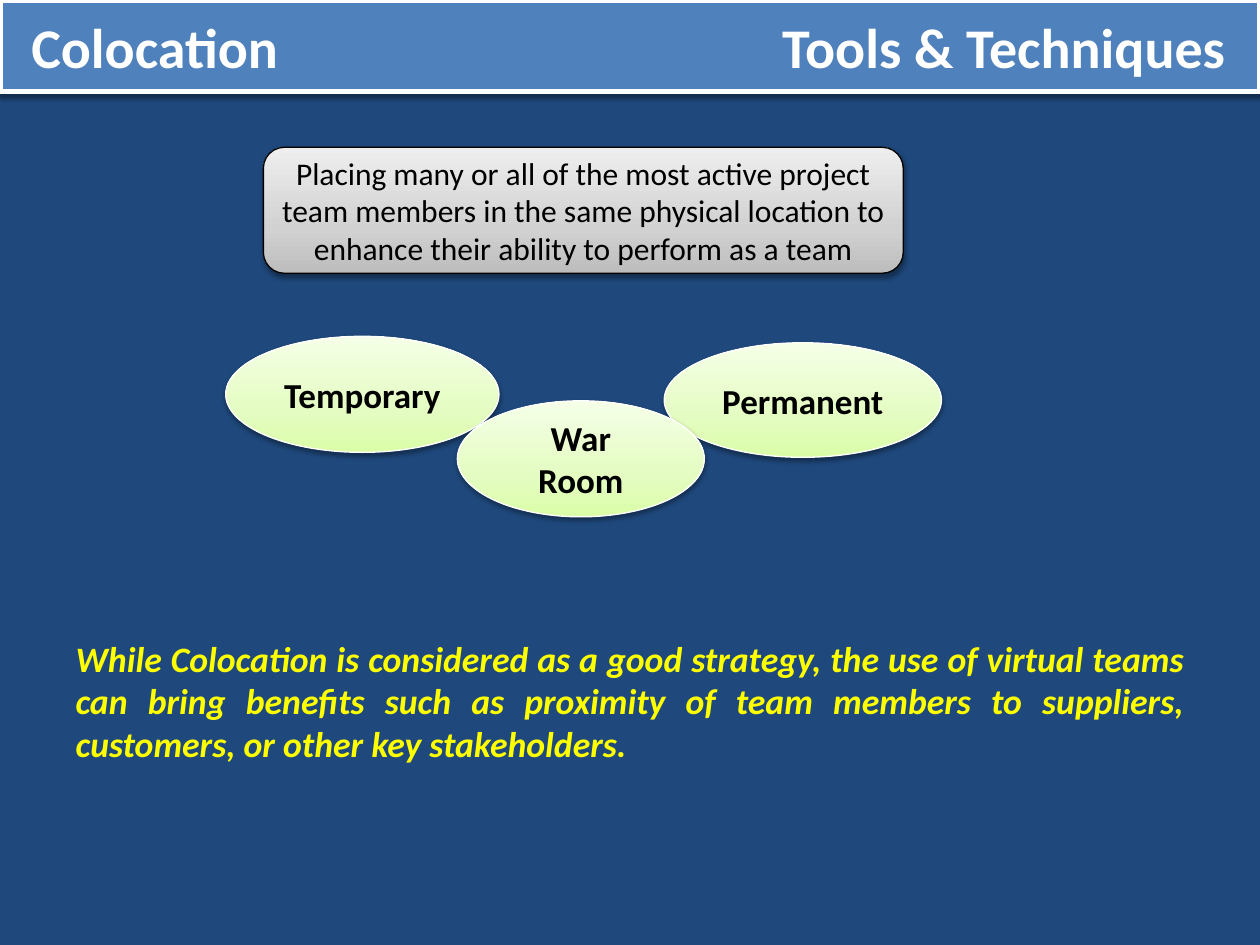
"""Build the Colocation slide."""
from lxml.etree import SubElement
from pptx import Presentation
from pptx.dml.color import RGBColor
from pptx.enum.shapes import MSO_SHAPE
from pptx.enum.text import MSO_ANCHOR, MSO_AUTO_SIZE, PP_ALIGN
from pptx.oxml.ns import qn
from pptx.util import Cm, Pt

COLORS = {
    "background": "1F497D",
    "banner": "4F81BD",
    "white": "FFFFFF",
    "black": "000000",
    "yellow": "FFFF00",
}
GRAY_STOPS = ((0, "BDBDBD"), (35, "D1D1D1"), (100, "EEEEEE"))
GREEN_STOPS = ((0, "DAFDA7"), (35, "E4FCC2"), (100, "F5FFE7"))
STRATEGIES = (
    ("Temporary", (4.55, 6.78, 5.51, 2.34)),
    ("Permanent", (13.39, 6.91, 5.59, 2.31)),
    ("War Room", (9.22, 8.08, 4.98, 2.34)),
)


def rgb(name):
    return RGBColor.from_string(COLORS[name])


def place(shape, bounds):
    for side, length in zip(("left", "top", "width", "height"), bounds):
        setattr(shape, side, Cm(length))


def set_text(shape, text, size, color, align=PP_ALIGN.CENTER,
             anchor=MSO_ANCHOR.MIDDLE, **styles):
    frame = shape.text_frame
    frame.word_wrap = True
    frame.auto_size = MSO_AUTO_SIZE.NONE
    frame.vertical_anchor = anchor
    para = frame.paragraphs[0]
    para.alignment = align
    span = para.add_run()
    span.text = text
    formats = {"name": "Calibri", "size": Pt(size), **styles}
    for name, value in formats.items():
        setattr(span.font, name, value)
    span.font.color.rgb = rgb(color)
    return para


def set_outline(shape, color, width):
    shape.line.color.rgb = rgb(color)
    shape.line.width = Pt(width)


def add_shadow(shape):
    shape.shadow.inherit = False
    effects = shape.element.spPr.find(qn("a:effectLst"))
    shadow = SubElement(effects, qn("a:outerShdw"), blurRad="40000",
                        dist="20000", dir="5400000", rotWithShape="0")
    color = SubElement(shadow, qn("a:srgbClr"), val=COLORS["black"])
    SubElement(color, qn("a:alpha"), val="38000")


def fill_gradient(shape, stops):
    shape.fill.gradient()
    shape.fill.gradient_angle = 90
    stop_list = shape.element.spPr.find(qn("a:gradFill")).find(qn("a:gsLst"))
    for old_stop in list(stop_list):
        stop_list.remove(old_stop)
    for percent, color in stops:
        stop = SubElement(stop_list, qn("a:gs"), pos=str(percent * 1000))
        SubElement(stop, qn("a:srgbClr"), val=color)


def add_bubble(shapes, kind, bounds, stops, outline, text, size, bold):
    bubble = shapes.add_shape(kind, *map(Cm, bounds))
    fill_gradient(bubble, stops)
    set_outline(bubble, outline, 0.75)
    add_shadow(bubble)
    set_text(bubble, text, size, "black", bold=bold)


def format_banner(title):
    place(title, (0, 0, 25.4, 1.85))
    title.fill.solid()
    title.fill.fore_color.rgb = rgb("banner")
    set_outline(title, "white", 3)
    add_shadow(title)
    para = set_text(title, "Colocation\tTools & Techniques", 32, "white",
                    align=PP_ALIGN.LEFT, bold=True)
    title.text_frame.margin_left = Cm(0.63)
    tabs = SubElement(para._p.get_or_add_pPr(), qn("a:tabLst"))
    SubElement(tabs, qn("a:tab"), pos=str(Cm(24.08)), algn="r")


def format_note(body):
    place(body, (1.27, 12.7, 22.86, 2.34))
    para = set_text(
        body,
        "While Colocation is considered as a good strategy, the use of virtual "
        "teams can bring benefits such as proximity of team members to "
        "suppliers, customers, or other key stakeholders.",
        20.4, "yellow", align=PP_ALIGN.JUSTIFY, anchor=MSO_ANCHOR.TOP,
        bold=True, italic=True)
    properties = para._p.get_or_add_pPr()
    for name in ("marL", "indent"):
        properties.set(name, "0")
    SubElement(properties, qn("a:buNone"))


def main():
    deck = Presentation()
    deck.slide_width, deck.slide_height = Cm(25.4), Cm(19.05)
    page = deck.slides.add_slide(deck.slide_layouts[1])
    page.background.fill.solid()
    page.background.fill.fore_color.rgb = rgb("background")
    format_banner(page.shapes.title)
    add_bubble(page.shapes, MSO_SHAPE.ROUNDED_RECTANGLE,
               (5.31, 2.97, 12.9, 2.54), GRAY_STOPS, "black",
               "Placing many or all of the most active project team members in "
               "the same physical location to enhance their ability to perform "
               "as a team", 18, False)
    group = page.shapes.add_group_shape()
    for label, bounds in STRATEGIES:
        add_bubble(group.shapes, MSO_SHAPE.OVAL, bounds, GREEN_STOPS, "white",
                   label, 20, True)
    format_note(page.placeholders[1])
    deck.save("out.pptx")


if __name__ == "__main__":
    main()
